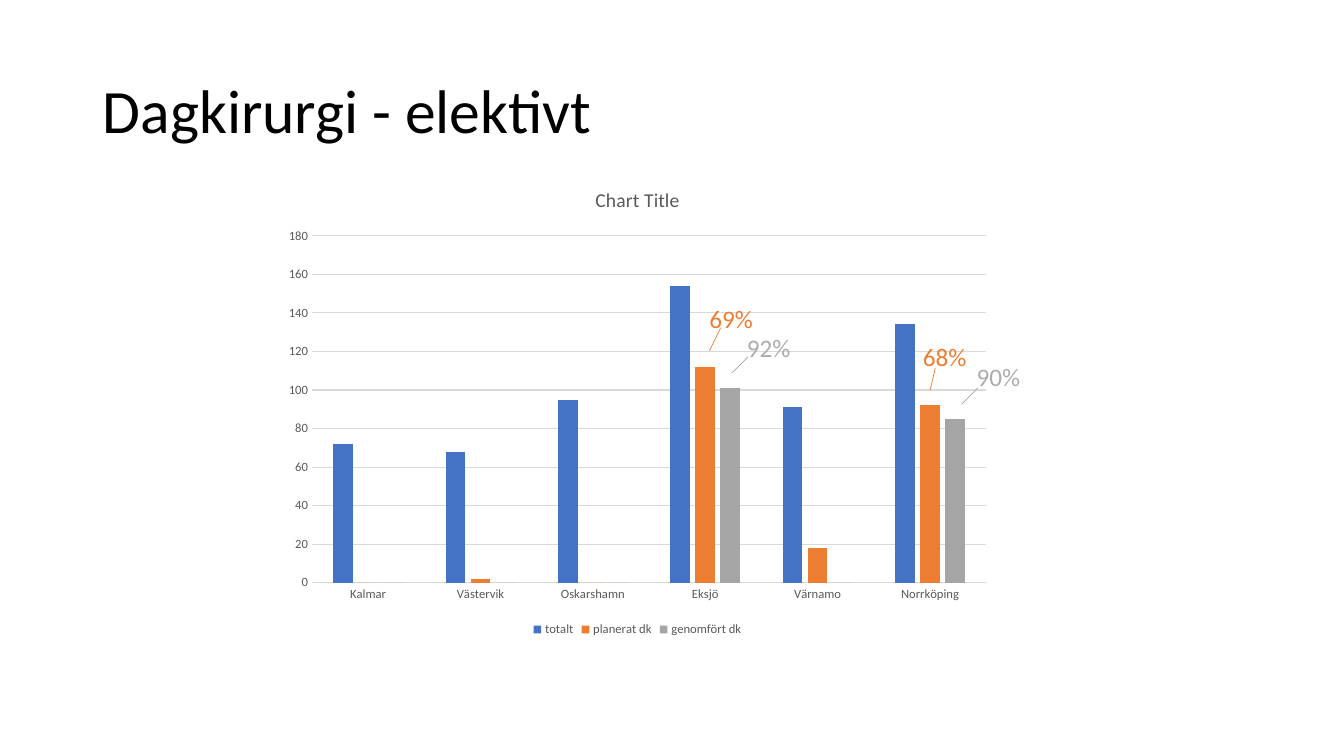
from lxml.etree import SubElement
from pptx import Presentation
from pptx.chart.data import CategoryChartData
from pptx.dml.color import RGBColor
from pptx.enum.chart import XL_CHART_TYPE as ChartType
from pptx.enum.chart import XL_LEGEND_POSITION as LegendPosition
from pptx.enum.chart import XL_TICK_MARK as TickMark
from pptx.enum.shapes import MSO_CONNECTOR as Connector
from pptx.enum.text import MSO_ANCHOR as Anchor
from pptx.oxml.ns import qn
from pptx.util import Cm, Pt

BLUE, ORANGE, GRAY = "4472C4", "ED7D31", "A5A5A5"
BLACK, TEXT_GRAY, LABEL_GRAY, GRID = "000000", "595959", "AFABAB", "D9D9D9"

HOSPITALS = ["Kalmar", "Västervik", "Oskarshamn", "Eksjö", "Värnamo", "Norrköping"]
SERIES = [
    ("totalt", [72, 68, 95, 154, 91, 134], BLUE),
    ("planerat dk", [0, 2, 0, 112, 18, 92], ORANGE),
    ("genomfört dk", [0, 0, 0, 101, 0, 85], GRAY),
]
SHARES = [
    ("69%", (17.63, 7.52), ORANGE, (18.16, 8.26), (17.88, 8.84), ORANGE),
    ("68%", (23.01, 8.48), ORANGE, (23.57, 9.27), (23.44, 9.83), ORANGE),
    ("92%", (18.57, 8.26), LABEL_GRAY, (18.85, 8.99), (18.44, 9.4), GRAY),
    ("90%", (24.36, 8.99), LABEL_GRAY, (24.64, 9.78), (24.23, 10.19), GRAY),
]


def color(value):
    return RGBColor.from_string(value)


class SlideBuilder:
    font_name = "Calibri"

    def __init__(self, slide):
        self.slide = slide

    def style_font(self, font, size, fill):
        font.name = self.font_name
        font.size = Pt(size)
        font.bold = False
        font.color.rgb = color(fill)

    def style_line(self, line, fill, width):
        line.color.rgb = color(fill)
        line.width = Pt(width)

    def text(self, words, left, top, width, height, size, fill, wrap=False, anchor=Anchor.TOP, spacing=1.0):
        shape = self.slide.shapes.add_textbox(Cm(left), Cm(top), Cm(width), Cm(height))
        frame = shape.text_frame
        frame.word_wrap = wrap
        frame.vertical_anchor = anchor
        paragraph = frame.paragraphs[0]
        paragraph.line_spacing = spacing
        run = paragraph.add_run()
        run.text = words
        self.style_font(run.font, size, fill)

    def line(self, start, end, fill):
        connector = self.slide.shapes.add_connector(Connector.STRAIGHT, *map(Cm, start + end))
        self.style_line(connector.line, fill, 0.5)
        SubElement(connector._element.spPr, qn("a:effectLst"))

    def column_chart(self, title, categories, series_list, left, top, width, height):
        data = CategoryChartData()
        data.categories = categories
        for name, values, _ in series_list:
            data.add_series(name, values)
        chart = self.slide.shapes.add_chart(
            ChartType.COLUMN_CLUSTERED, Cm(left), Cm(top), Cm(width), Cm(height), data
        ).chart
        self.style_font(chart.font, 10, BLACK)

        chart.has_title = True
        run = chart.chart_title.text_frame.paragraphs[0].add_run()
        run.text = title
        self.style_font(run.font, 14, TEXT_GRAY)
        chart.chart_title.include_in_layout = False

        chart.has_legend = True
        chart.legend.position = LegendPosition.BOTTOM
        chart.legend.include_in_layout = False
        self.style_font(chart.legend.font, 9, TEXT_GRAY)

        plot = chart.plots[0]
        plot.gap_width = 219
        plot.overlap = -27
        plot.vary_by_categories = False
        for series, (_, _, fill) in zip(plot.series, series_list):
            series.format.fill.solid()
            series.format.fill.fore_color.rgb = color(fill)
            series.invert_if_negative = False

        for axis in (chart.category_axis, chart.value_axis):
            axis.major_tick_mark = axis.minor_tick_mark = TickMark.NONE
            self.style_font(axis.tick_labels.font, 9, TEXT_GRAY)
        self.style_line(chart.category_axis.format.line, GRID, 0.75)
        value_axis = chart.value_axis
        value_axis.minimum_scale = 0
        value_axis.maximum_scale = 180
        value_axis.major_unit = 20
        value_axis.format.line.fill.background()
        value_axis.has_major_gridlines = True
        self.style_line(value_axis.major_gridlines.format.line, GRID, 0.75)


def main():
    presentation = Presentation()
    presentation.slide_width = Cm(33.87)
    presentation.slide_height = Cm(19.05)
    builder = SlideBuilder(presentation.slides.add_slide(presentation.slide_layouts[6]))

    builder.text("Dagkirurgi - elektivt", 2.34, 1.02, 29.21, 3.68, 44, BLACK,
                 wrap=True, anchor=Anchor.MIDDLE, spacing=0.9)
    builder.column_chart("Chart Title", HOSPITALS, SERIES, 6.91, 4.24, 18.31, 11.91)
    for share, (left, top), label_color, start, end, line_color in SHARES:
        builder.text(share, left, top, 1.63, 1.02, 18, label_color)
        builder.line(start, end, line_color)

    presentation.save("out.pptx")


if __name__ == "__main__":
    main()
